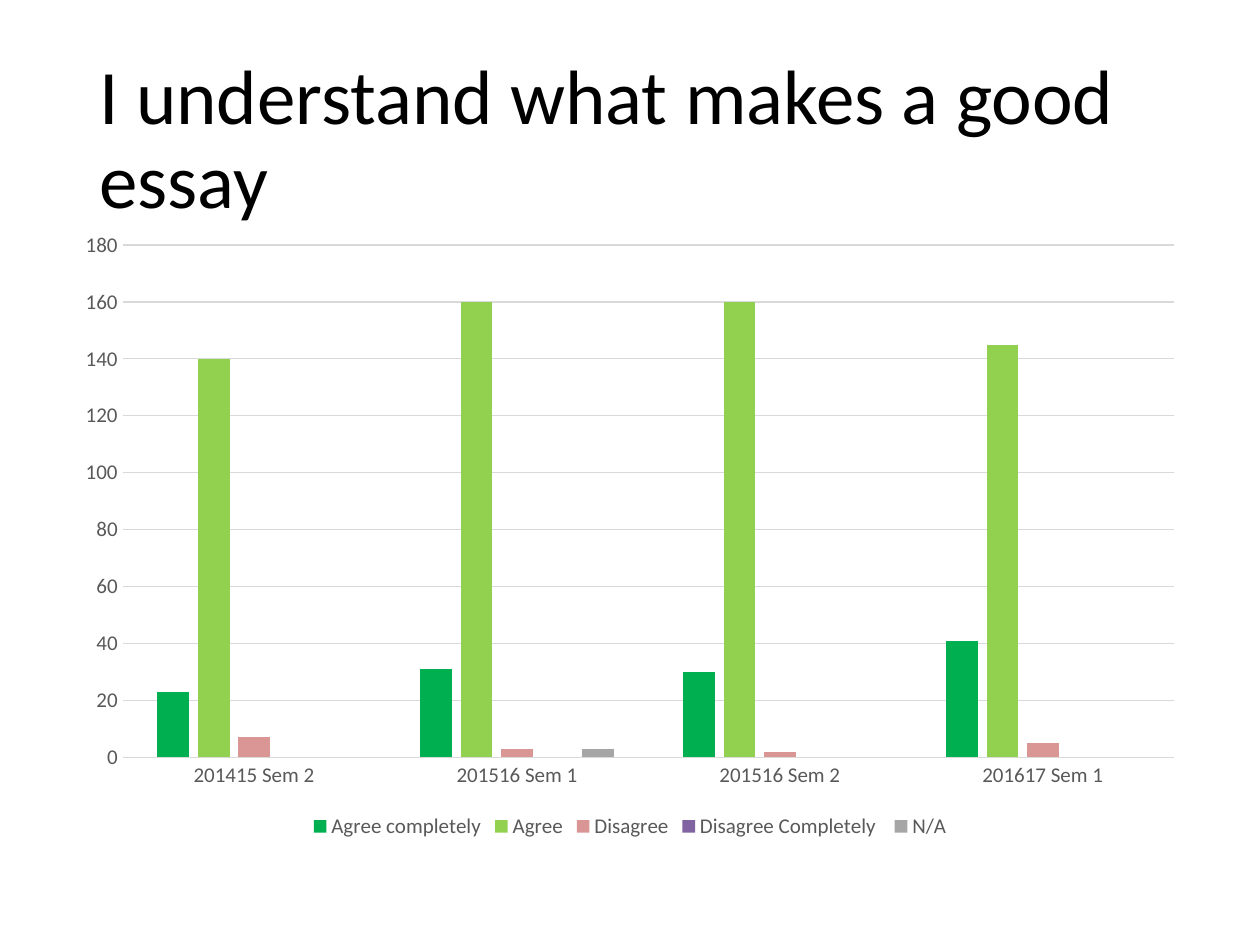
"""Build a slide with a clustered column chart of survey answers by semester."""
from pptx import Presentation
from pptx import util as u
from pptx.chart.data import CategoryChartData
from pptx.dml.color import RGBColor
from pptx.enum import chart as charts, text

PX = u.Inches(1) / 126
FONT = "Calibri"
COLORS = {
    "title": "000000",
    "label": "595959",
    "grid": "D9D9D9",
    "Agree completely": "00B050",
    "Agree": "92D050",
    "Disagree": "D99694",
    "Disagree Completely ": "8064A2",
    "N/A": "A6A6A6",
}
SEMESTERS = ["201415 Sem 2", "201516 Sem 1", "201516 Sem 2", "201617 Sem 1"]
ANSWERS = {
    "Agree completely": [23, 31, 30, 41],
    "Agree": [140, 160, 160, 145],
    "Disagree": [7, 3, 2, 5],
    "Disagree Completely ": [None] * 4,
    "N/A": [None, 3, None, None],
}


def px(*lengths):
    return [round(length * PX) for length in lengths]


def style_font(font, size, color):
    font.name = FONT
    font.size = u.Pt(size)
    font.color.rgb = RGBColor.from_string(COLORS[color])


deck = Presentation()
deck.slide_width, deck.slide_height = px(1260, 945)
page = deck.slides.add_slide(deck.slide_layouts[6])

box = page.shapes.add_textbox(*px(87, 50, 1086, 183))
frame = box.text_frame
frame.word_wrap = True
frame.vertical_anchor = text.MSO_ANCHOR.MIDDLE
frame.text = "I understand what makes a good essay"
para = frame.paragraphs[0]
para.line_spacing = 0.9
style_font(para.runs[0].font, 44, "title")

data = CategoryChartData()
data.categories = SEMESTERS
for answer, counts in ANSWERS.items():
    data.add_series(answer, counts)
chart = page.shapes.add_chart(
    charts.XL_CHART_TYPE.COLUMN_CLUSTERED, *px(63, 220, 1134, 624), data
).chart
style_font(chart.font, 10, "title")
chart.has_title = False

plot = chart.plots[0]
plot.gap_width = 219
plot.overlap = -27
plot.vary_by_categories = False
for series in plot.series:
    series.invert_if_negative = False
    series.format.fill.solid()
    series.format.fill.fore_color.rgb = RGBColor.from_string(COLORS[series.name])

for axis in (chart.category_axis, chart.value_axis):
    axis.major_tick_mark = charts.XL_TICK_MARK.NONE
    axis.minor_tick_mark = charts.XL_TICK_MARK.NONE
    style_font(axis.tick_labels.font, 12, "label")

chart.value_axis.minimum_scale = 0
chart.value_axis.maximum_scale = 180
chart.value_axis.major_unit = 20
chart.value_axis.has_major_gridlines = True
chart.value_axis.format.line.fill.background()
for line in (chart.category_axis.format.line, chart.value_axis.major_gridlines.format.line):
    line.width = u.Pt(0.75)
    line.color.rgb = RGBColor.from_string(COLORS["grid"])

chart.has_legend = True
chart.legend.position = charts.XL_LEGEND_POSITION.BOTTOM
chart.legend.include_in_layout = False
style_font(chart.legend.font, 12, "label")

deck.save("out.pptx")
